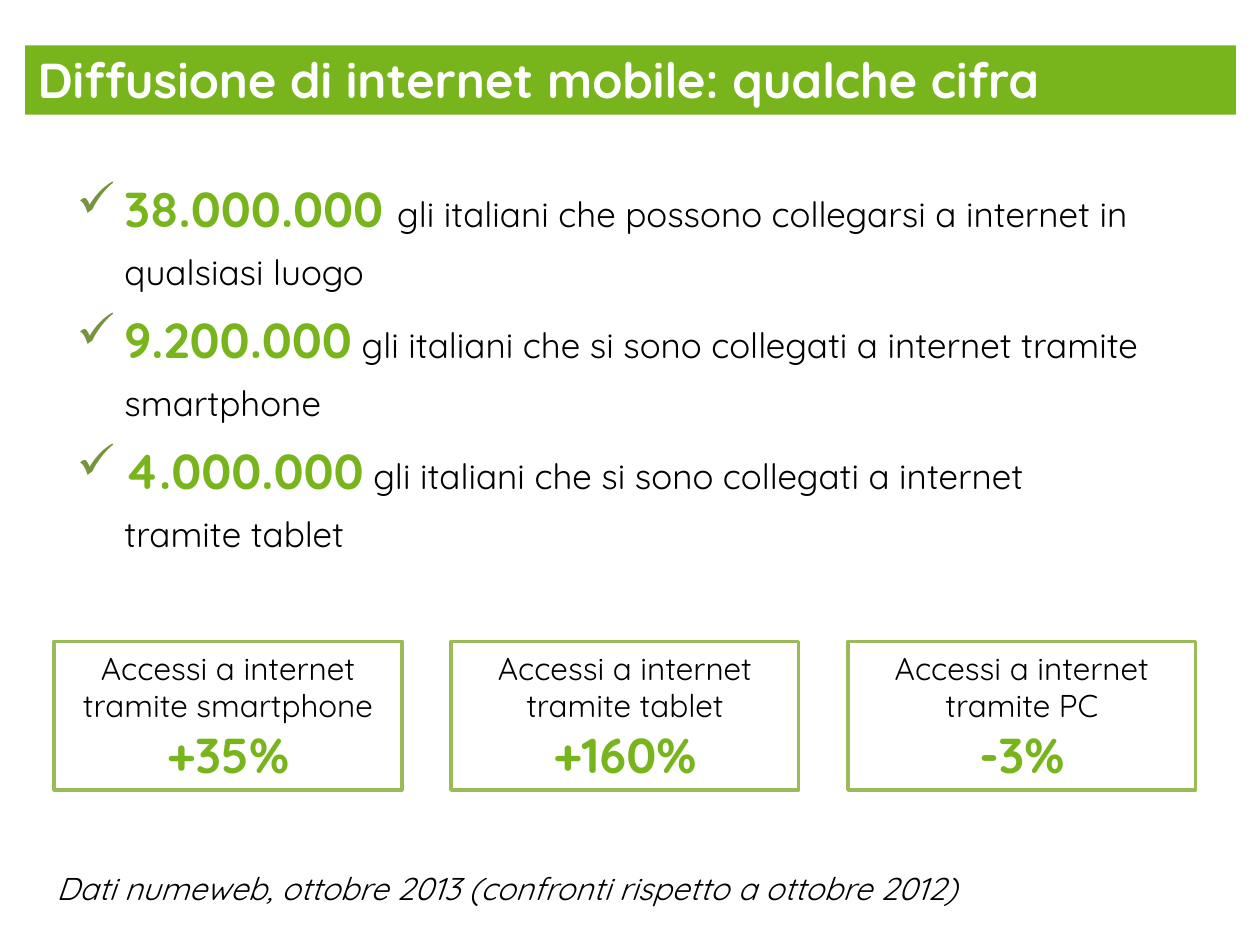
"""Build a slide of figures on mobile internet use in Italy."""
from lxml import etree
from pptx import Presentation
from pptx.dml.color import RGBColor
from pptx.enum import shapes, text
from pptx.oxml import ns
from pptx.util import Inches, Pt

GREEN = RGBColor(0x78, 0xB5, 0x1D)
BORDER = RGBColor(0x9B, 0xBB, 0x59)
BLACK = RGBColor(0, 0, 0)
WHITE = RGBColor(255, 255, 255)
CHECK_COLOR = "77933C"
FONT = "Quicksand"

TITLE = "Diffusione di internet mobile: qualche cifra"
FIGURES = [
    ("38.000.000 ", "gli italiani che possono collegarsi a internet in qualsiasi luogo"),
    ("9.200.000", " gli italiani che si sono collegati a internet tramite smartphone"),
    ("4.000.000", " gli italiani che si sono collegati a internet tramite tablet"),
]
CHANGES = [
    ("Accessi a internet tramite smartphone", "+35%"),
    ("Accessi a internet tramite tablet", "+160%"),
    ("Accessi a internet tramite PC", "-3%"),
]
SOURCE = "Dati numeweb, ottobre 2013 (confronti rispetto a ottobre 2012)"
CARD_LEFT, CARD_TOP, CARD_WIDTH, CARD_HEIGHT, CARD_STEP = 0.43, 5.09, 2.76, 1.18, 3.15


def add_span(para, words, size=18, color=BLACK, bold=False, italic=False):
    span = para.add_run()
    span.text = words
    font = span.font
    font.name, font.size, font.bold, font.italic = FONT, Pt(size), bold, italic
    font.color.rgb = color


def add_para(frame, first):
    return frame.paragraphs[0] if first else frame.add_paragraph()


def add_box(page, left, top, width, height, wrap=False):
    box = page.shapes.add_textbox(*map(Inches, (left, top, width, height)))
    box.text_frame.word_wrap = wrap
    return box.text_frame


def add_rectangle(page, left, top, width, height, fill):
    box = page.shapes.add_shape(
        shapes.MSO_SHAPE.RECTANGLE, *map(Inches, (left, top, width, height)))
    box.shadow.inherit = False
    box.fill.solid()
    box.fill.fore_color.rgb = fill
    return box


def add_check(para):
    props = para._p.get_or_add_pPr()
    props.set("marL", str(Inches(0.38)))
    props.set("indent", str(-Inches(0.38)))
    color = etree.SubElement(props, ns.qn("a:buClr"))
    etree.SubElement(color, ns.qn("a:srgbClr"), val=CHECK_COLOR)
    etree.SubElement(props, ns.qn("a:buChar"), char="✓")


def main():
    deck = Presentation()
    deck.slide_width, deck.slide_height = Inches(10), Inches(7.5)
    page = deck.slides.add_slide(deck.slide_layouts[6])

    banner = add_rectangle(page, 0.2, 0.36, 9.61, 0.55, GREEN)
    banner.line.fill.background()
    title = add_box(page, 0.2, 0.34, 8.22, 0.57)
    add_span(title.paragraphs[0], TITLE, size=28, color=WHITE, bold=True)

    figures = add_box(page, 0.51, 1.23, 8.66, 3.67, wrap=True)
    for index, (number, label) in enumerate(FIGURES):
        para = add_para(figures, index == 0)
        add_check(para)
        para.line_spacing = 1.3
        add_span(para, number, size=28, color=GREEN, bold=True)
        add_span(para, label, size=20)

    source = add_box(page, 0.35, 6.85, 7.76, 0.4)
    add_span(source.paragraphs[0], SOURCE, italic=True)

    for index, (label, change) in enumerate(CHANGES):
        card = add_rectangle(page, CARD_LEFT + index * CARD_STEP, CARD_TOP,
                             CARD_WIDTH, CARD_HEIGHT, WHITE)
        card.line.color.rgb = BORDER
        card.line.width = Pt(2)
        frame = card.text_frame
        frame.word_wrap = True
        frame.vertical_anchor = text.MSO_ANCHOR.MIDDLE
        formats = [(label, {}), (change, dict(size=28, color=GREEN, bold=True))]
        for row, (words, style) in enumerate(formats):
            para = add_para(frame, row == 0)
            para.alignment = text.PP_ALIGN.CENTER
            add_span(para, words, **style)

    deck.save("out.pptx")


if __name__ == "__main__":
    main()
